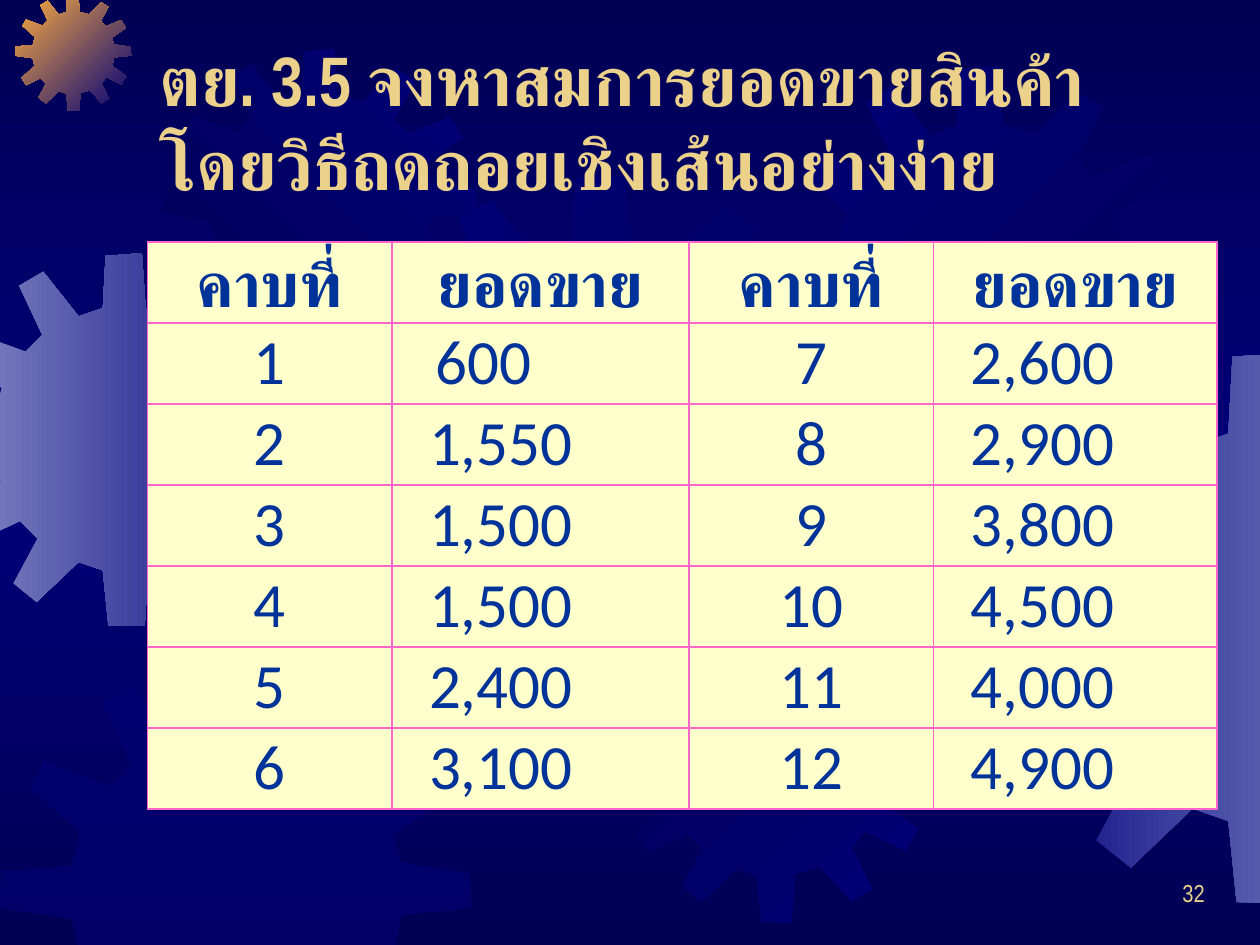
from copy import deepcopy

from lxml import etree
from pptx import Presentation
from pptx import util as u
from pptx.dml.color import RGBColor
from pptx.enum import text as t
from pptx.oxml.ns import qn

NAVY = RGBColor(0x00, 0x00, 0x54)
BLUE = RGBColor(0x00, 0x00, 0x7A)
HAZE = RGBColor(0x71, 0x76, 0xBB)
STEEL = RGBColor(0x55, 0x5B, 0xAD)
AMBER = RGBColor(0xFC, 0xAB, 0x40)
GOLD = RGBColor(0xEB, 0xD1, 0x89)
CREAM = RGBColor(0xFF, 0xFF, 0xCC)
INK = RGBColor(0x00, 0x33, 0x99)
PINK = RGBColor(0xFF, 0x66, 0xCC)

# The slide is a grid of 100 columns by 75 rows of square cells
COLS, ROWS = 100, 75
CELL = u.Inches(10) / COLS

# Outline of one gear in a square of SPAN units
SPAN = 401
TEETH = [
    (255, 67), (223, 59), (219, 0), (180, 3), (177, 59), (151, 68),
    (113, 20), (87, 35), (112, 88), (94, 106), (38, 85), (25, 107),
    (68, 145), (61, 174), (1, 178), (0, 210), (61, 219), (67, 246),
    (22, 287), (38, 312), (88, 288), (107, 307), (81, 355), (106, 375),
    (151, 332), (177, 341), (183, 400), (222, 401), (226, 339), (259, 330),
    (299, 374), (325, 358), (299, 306), (316, 284), (368, 309), (384, 281),
    (336, 246), (342, 216), (401, 210), (400, 180), (341, 171), (335, 148),
    (383, 114), (367, 87), (313, 109), (296, 91), (323, 41), (297, 25),
]

# Left, top, size, first colour, last colour, clockwise angle
GEARS = [
    (-4.9, 20.1, 29.6, HAZE, BLUE, 0),
    (1.2, -0.4, 9.2, AMBER, BLUE, 45),
    (13, 3.9, 24.8, NAVY, BLUE, 315),
    (27.7, 13.9, 40.1, BLUE, NAVY, 45),
    (0, 52.5, 37.4, BLUE, None, 0),
    (49.1, 48.4, 24.8, NAVY, BLUE, 45),
    (61.8, 5.3, 32, BLUE, NAVY, 45),
    (78.2, 28, 43.7, BLUE, STEEL, 0),
]

HEAD = ["คาบที่", "ยอดขาย"]
SALES = ["600", "1,550", "1,500", "1,500", "2,400", "3,100",
         "2,600", "2,900", "3,800", "4,500", "4,000", "4,900"]


def size(n):
    return u.Emu(round(n * CELL))


def cut(pts, axis, edge, sign):
    """Keep the part of a polygon on one side of a slide edge."""
    kept = []
    for a, b in zip(pts, pts[1:] + pts[:1]):
        da, db = sign * (a[axis] - edge), sign * (b[axis] - edge)
        if da >= 0:
            kept.append(a)
        if da * db < 0:
            k = da / (da - db)
            kept.append(tuple(p + k * (q - p) for p, q in zip(a, b)))
    return kept


def write(frame, words, pt=36, font="Calibri", color=INK, bold=False,
          align=t.PP_ALIGN.LEFT):
    par = frame.paragraphs[0]
    par.alignment = align
    run = par.add_run()
    run.text = words
    run.font.size = u.Pt(pt)
    run.font.name = font
    run.font.bold = bold
    run.font.color.rgb = color


class Deck:
    def __init__(self):
        self.prs = Presentation()
        self.prs.slide_width = size(COLS)
        self.prs.slide_height = size(ROWS)
        self.slide = self.prs.slides.add_slide(self.prs.slide_layouts[6])
        self.font = "Arial Narrow"

    def blend(self, fill, colors, angle):
        fill.gradient()
        fill.gradient_angle = (360 - angle) % 360
        for stop, color in zip(fill.gradient_stops, colors):
            stop.color.rgb = color

    def back(self, edge, mid):
        fill = self.slide.background.fill
        self.blend(fill, (edge, mid), 90)
        stops = next(self.slide._element.iter(qn("a:gsLst")))
        stops.append(deepcopy(stops[0]))
        for stop, pos in zip(fill.gradient_stops, (0, 0.5, 1)):
            stop.position = pos

    def gear(self, left, top, span, first, last, angle):
        k = span / SPAN
        pts = [(left + x * k, top + y * k) for x, y in TEETH]
        for axis, edge, sign in ((0, 0, 1), (1, 0, 1),
                                 (0, COLS, -1), (1, ROWS, -1)):
            pts = cut(pts, axis, edge, sign)
        pts = [(size(x), size(y)) for x, y in pts]
        pen = self.slide.shapes.build_freeform(*pts[0], scale=1.0)
        pen.add_line_segments(pts[1:], close=True)
        shape = pen.convert_to_shape()
        shape.shadow.inherit = False
        shape.line.fill.background()
        if last is not None:
            self.blend(shape.fill, (first, last), angle)
        else:  # half-clear plain gear
            shape.fill.solid()
            shape.fill.fore_color.rgb = first
            tone = next(shape._element.spPr.iter(qn("a:srgbClr")))
            etree.SubElement(tone, qn("a:alpha"), val="50000")

    def label(self, words, x, y, w, h, anchor=t.MSO_ANCHOR.TOP, **style):
        box = self.slide.shapes.add_textbox(*map(size, (x, y, w, h)))
        frame = box.text_frame
        frame.word_wrap = True
        frame.vertical_anchor = anchor
        write(frame, words, font=self.font, color=GOLD, **style)

    def rule(self, cell):
        props = cell._tc.get_or_add_tcPr()
        for i, side in enumerate(("lnL", "lnR", "lnT", "lnB")):
            line = etree.Element(qn("a:" + side), w=str(u.Pt(1)))
            fill = etree.SubElement(line, qn("a:solidFill"))
            etree.SubElement(fill, qn("a:srgbClr"), val=str(PINK))
            props.insert(i, line)

    def table(self, rows, x, y, widths, high):
        grid = self.slide.shapes.add_table(
            len(rows), len(widths), size(x), size(y),
            size(sum(widths)), size(high * len(rows))).table
        for col, wide in zip(grid.columns, widths):
            col.width = size(wide)
        for r, row in enumerate(rows):
            grid.rows[r].height = size(high)
            for c, words in enumerate(row):
                cell = grid.cell(r, c)
                cell.fill.solid()
                cell.fill.fore_color.rgb = CREAM
                cell.vertical_anchor = t.MSO_ANCHOR.BOTTOM
                cell.margin_top, cell.margin_bottom = 0, size(0.2)
                # Sales figures sit left of the middle
                if r and c % 2:
                    shift = 7.3 if c == 1 else 6.2
                    cell.margin_right = size(shift if "," in words else 10)
                write(cell.text_frame, words, bold=r == 0,
                      align=t.PP_ALIGN.CENTER)
                self.rule(cell)


def main():
    deck = Deck()

    # Backdrop
    deck.back(NAVY, BLUE)
    for gear in GEARS:
        deck.gear(*gear)

    # Slide number and title
    deck.label("32", 75.8, 69.2, 20.8, 5, pt=14, align=t.PP_ALIGN.RIGHT)
    deck.label("ตย. 3.5 จงหาสมการยอดขายสินค้า โดยวิธีถดถอยเชิงเส้นอย่างง่าย",
               11.7, 3.3, 85, 12.5, anchor=t.MSO_ANCHOR.MIDDLE,
               pt=40, bold=True)

    # Sales by period, two halves side by side
    half = len(SALES) // 2
    rows = [HEAD * 2]
    for i in range(half):
        rows.append([str(i + 1), SALES[i], str(i + 1 + half), SALES[i + half]])
    deck.table(rows, 11.7, 19.2, (19.4, 23.6, 19.4, 22.5), 6.43)

    deck.prs.save("out.pptx")


if __name__ == "__main__":
    main()
